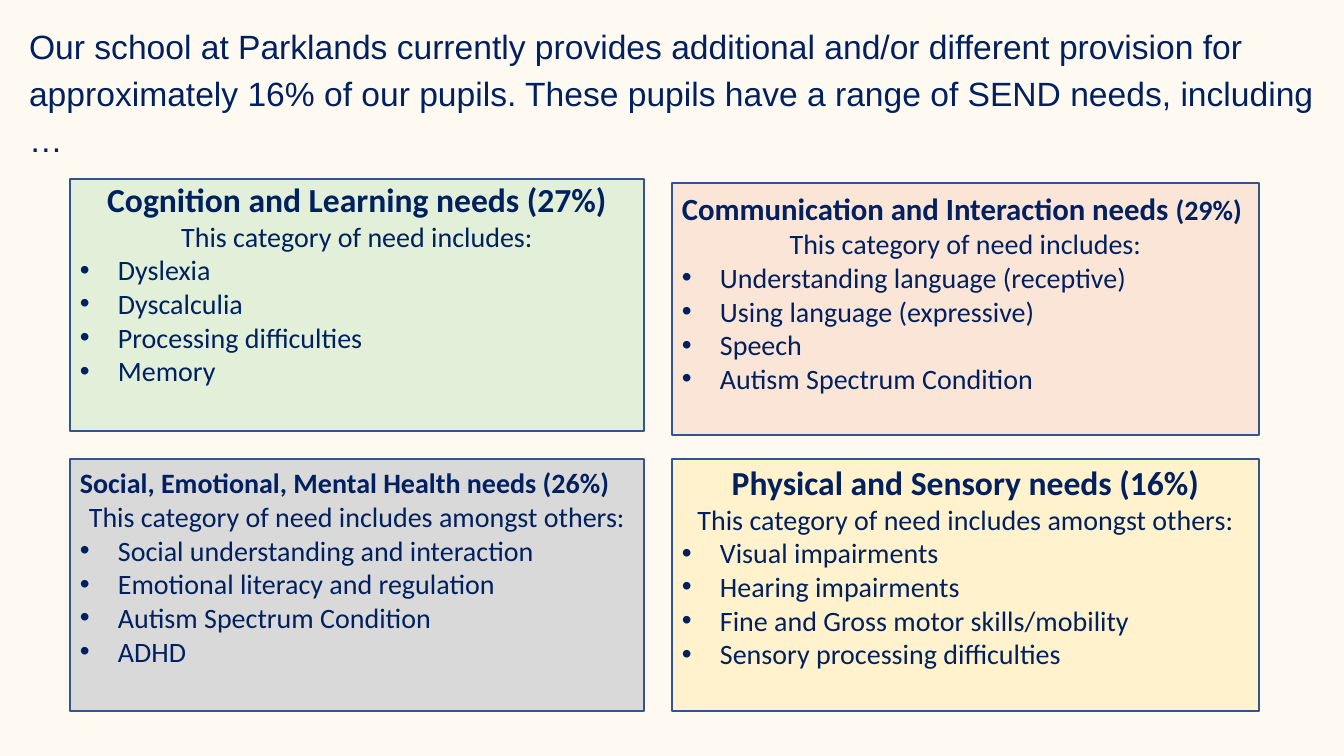
from dataclasses import dataclass

from lxml import etree
from pptx import Presentation
from pptx.dml.color import RGBColor
from pptx.enum.shapes import MSO_SHAPE
from pptx.enum.text import MSO_ANCHOR, MSO_AUTO_SIZE, PP_ALIGN
from pptx.oxml.ns import qn
from pptx.util import Pt

RECT = MSO_SHAPE.RECTANGLE
TOP = MSO_ANCHOR.TOP
FIXED = MSO_AUTO_SIZE.NONE
LEFT, CENTER = PP_ALIGN.LEFT, PP_ALIGN.CENTER
SCALE = 914400 / 100.8


@dataclass(frozen=True)
class Theme:
    """Colours, fonts and type sizes of the slide."""
    paper: str = "FFFAF1"
    ink: str = "002060"
    edge: str = "325491"
    green: str = "E2F0D9"
    peach: str = "FBE5D6"
    grey: str = "D9D9D9"
    cream: str = "FFF2CC"
    title_font: str = "Arial"
    body_font: str = "Calibri"
    title: int = 24
    large: int = 24
    medium: int = 22
    body: int = 20


THEME = Theme()

TITLE = ("Our school at Parklands currently provides additional and/or different "
         "provision for approximately 16% of our pupils. These pupils have a range "
         "of SEND needs, including …")
INTRO = "This category of need includes:"
OTHERS = "This category of need includes amongst others:"

LEFT_COL, RIGHT_COL = (70, 574), (672, 587)
HEIGHT = 252
NEEDS = [
    dict(col=LEFT_COL, top=179, pad=0, fill=THEME.green, align=CENTER,
         head=[("Cognition and Learning needs (27%)", THEME.large)], intro=INTRO,
         items=["Dyslexia", "Dyscalculia", "Processing difficulties", "Memory"]),
    dict(col=RIGHT_COL, top=183, pad=7, fill=THEME.peach, align=LEFT,
         head=[("Communication and Interaction needs ", THEME.medium),
               ("(29%)", THEME.body)], intro=INTRO,
         items=["Understanding language (receptive)", "Using language (expressive)",
                "Speech", "Autism Spectrum Condition"]),
    dict(col=LEFT_COL, top=459, pad=7, fill=THEME.grey, align=LEFT,
         head=[("Social, Emotional, Mental Health needs (26%)", THEME.body)],
         intro=OTHERS,
         items=["Social understanding and interaction",
                "Emotional literacy and regulation",
                "Autism Spectrum Condition", "ADHD"]),
    dict(col=RIGHT_COL, top=459, pad=3, fill=THEME.cream, align=CENTER,
         head=[("Physical and Sensory needs (16%)", THEME.large)], intro=OTHERS,
         items=["Visual impairments", "Hearing impairments",
                "Fine and Gross motor skills/mobility",
                "Sensory processing difficulties"]),
]


def px(count):
    """Turn pixels into EMU."""
    return round(count * SCALE)


def color(code):
    """Turn a hex code into a colour."""
    return RGBColor.from_string(code)


def style(run, font, size, bold=False):
    """Format one run of text."""
    run.font.name = font
    run.font.size = Pt(size)
    run.font.bold = bold
    run.font.color.rgb = color(THEME.ink)


def bullet(para):
    """Give a paragraph a round bullet and a hanging indent."""
    props = para._p.get_or_add_pPr()
    props.set("marL", str(px(38)))
    props.set("indent", str(-px(38)))
    etree.SubElement(props, qn("a:buFont")).set("typeface", "Arial")
    etree.SubElement(props, qn("a:buChar")).set("char", "•")


def add_title(slide, x, y, w, h):
    """Place the opening statement in the title placeholder."""
    title = slide.shapes.title
    title.left, title.top, title.width, title.height = map(px, (x, y, w, h))
    frame = title.text_frame
    frame.text = TITLE
    frame.word_wrap = True
    frame.auto_size = FIXED
    frame.vertical_anchor = TOP
    para = frame.paragraphs[0]
    para.alignment = LEFT
    para.line_spacing = 1.15
    para.space_after = Pt(6)
    style(para.runs[0], THEME.title_font, THEME.title)


def add_need(slide, x, y, w, h, need):
    """Draw one category of need with its heading, intro and bullets."""
    box = slide.shapes.add_shape(RECT, *map(px, (x, y, w, h)))
    box.shadow.inherit = False
    box.fill.solid()
    box.fill.fore_color.rgb = color(need["fill"])
    box.line.color.rgb = color(THEME.edge)
    box.line.width = Pt(1)
    frame = box.text_frame
    frame.word_wrap = True
    frame.vertical_anchor = TOP
    frame.margin_top = px(need["pad"])
    frame.margin_bottom = 0

    head = frame.paragraphs[0]
    head.alignment = need["align"]
    for text, size in need["head"]:
        run = head.add_run()
        run.text = text
        style(run, THEME.body_font, size, True)

    for place, text in enumerate([need["intro"], *need["items"]]):
        para = frame.add_paragraph()
        para.text = text
        para.alignment = LEFT if place else CENTER
        if place:
            bullet(para)
        style(para.runs[0], THEME.body_font, THEME.body)


def main():
    """Build and save the slide."""
    deck = Presentation()
    deck.slide_width, deck.slide_height = px(1344), px(756)
    slide = deck.slides.add_slide(deck.slide_layouts[5])
    slide.background.fill.solid()
    slide.background.fill.fore_color.rgb = color(THEME.paper)
    add_title(slide, 19, 15, 1306, 146)
    for need in NEEDS:
        x, w = need["col"]
        add_need(slide, x, need["top"], w, HEIGHT, need)
    deck.save("out.pptx")


if __name__ == "__main__":
    main()
